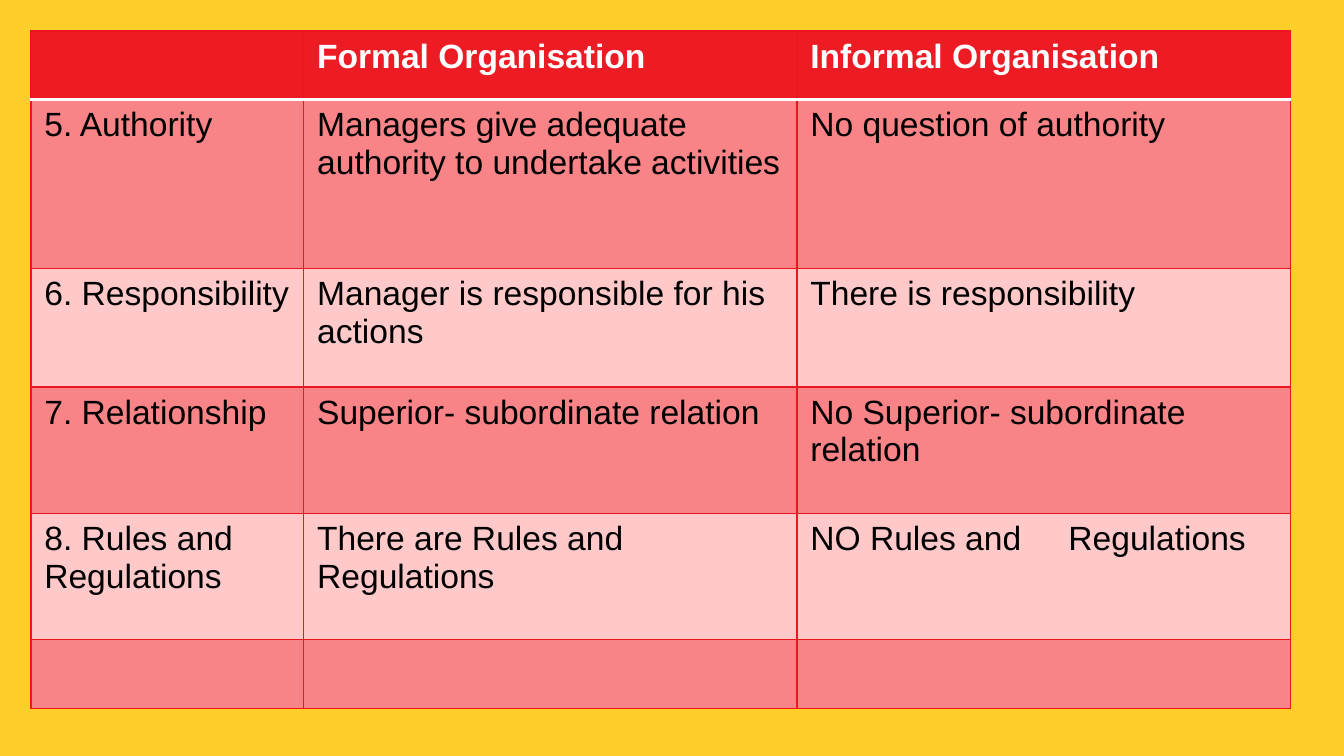
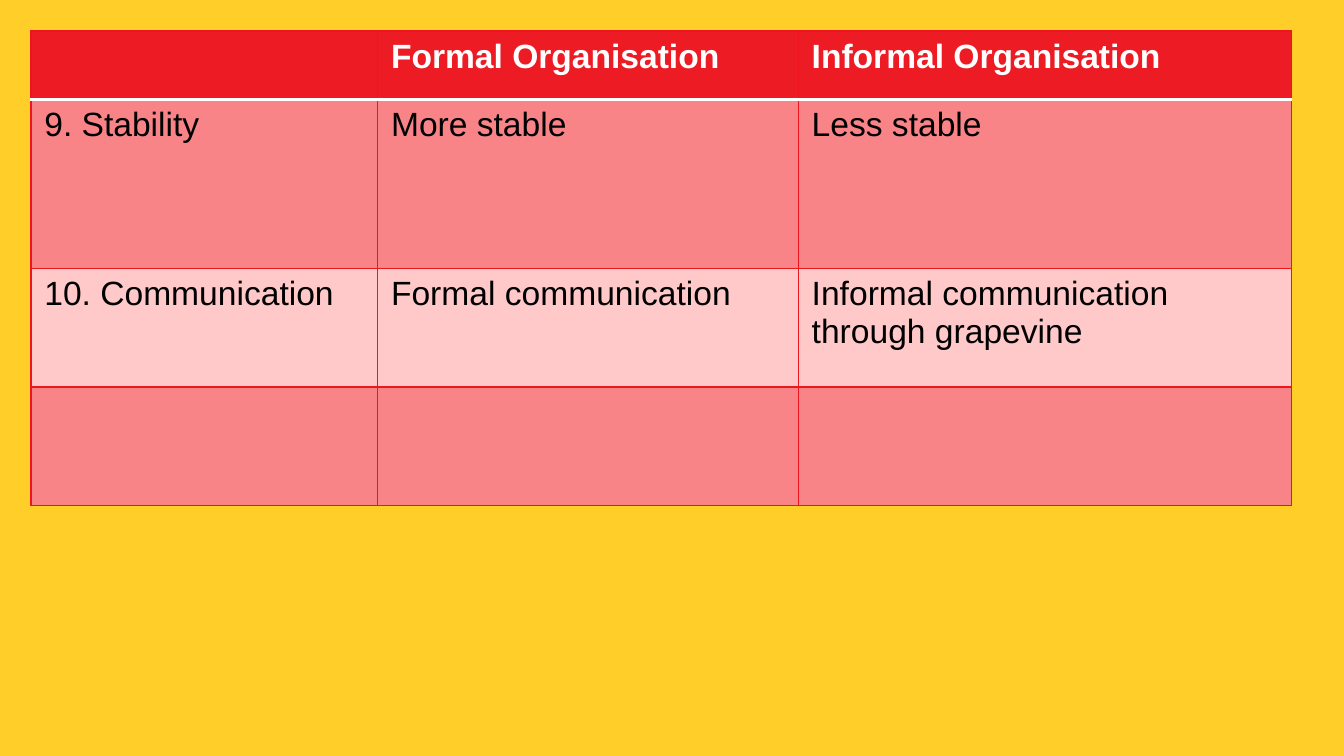
from dataclasses import dataclass

from lxml.etree import SubElement
from pptx import Presentation
from pptx.dml.color import RGBColor
from pptx.oxml.ns import qn
from pptx.util import Inches, Pt


@dataclass(frozen=True)
class Theme:
    background: str = "FFCE29"
    header: str = "ED1C24"
    dark_band: str = "F98488"
    light_band: str = "FFC9CA"
    grid: str = "ED161E"
    header_text: str = "FFFFFF"
    body_text: str = "000000"
    font: str = "Arial"
    size: float = 18
    grid_width: float = 0.75
    header_rule: float = 2


theme = Theme()


def write(cell, text, *, color, bold=False, tab=None):
    """Put one formatted paragraph in a cell, with an optional tab stop in inches."""
    paragraph = cell.text_frame.paragraphs[0]
    paragraph.font.size = Pt(theme.size)
    if not text:
        return
    run = paragraph.add_run()
    run.text = text
    run.font.name = theme.font
    run.font.size = Pt(theme.size)
    run.font.bold = bold
    run.font.color.rgb = RGBColor.from_string(color)
    if tab:
        properties = paragraph._p.get_or_add_pPr()
        stops = SubElement(properties, qn("a:tabLst"))
        SubElement(stops, qn("a:tab"), pos=str(Inches(tab)), algn="l")
        # Tab stops come before the default run properties
        properties.insert(0, stops)


def draw_border(cell, side, color, width):
    """Draw one edge of a cell: L, R, T or B."""
    line = SubElement(cell._tc.get_or_add_tcPr(), qn(f"a:ln{side}"), w=str(Pt(width)))
    fill = SubElement(line, qn("a:solidFill"))
    SubElement(fill, qn("a:srgbClr"), val=color)


# Content: column widths, row heights and wording of each comparison
headings = ("", "Formal Organisation", "Informal Organisation")
blank_row = ("", "", "")
comparisons = [
    (
        (2.03, 3.67, 3.67),
        (0.51, 1.26, 0.88, 0.94, 0.94, 0.51),
        [
            headings,
            ("5. Authority",
             "Managers give adequate authority to undertake activities",
             "No question of authority"),
            ("6. Responsibility",
             "Manager is responsible for his actions",
             "There is responsibility"),
            ("7. Relationship",
             "Superior- subordinate relation",
             "No Superior- subordinate relation"),
            ("8. Rules and Regulations",
             "There are Rules and Regulations",
             "NO Rules and\tRegulations"),
            blank_row,
        ],
    ),
    (
        (2.58, 3.13, 3.67),
        (0.51, 1.26, 0.88, 0.88),
        [
            headings,
            ("9. Stability", "More stable", "Less stable"),
            ("10. Communication",
             "Formal communication",
             "Informal communication through grapevine"),
            blank_row,
        ],
    ),
]

# Shared slide setup, in 16:9
prs = Presentation()
prs.slide_width = Inches(10)
prs.slide_height = Inches(10) * 9 // 16
backdrop = prs.slide_master.background.fill
backdrop.solid()
backdrop.fore_color.rgb = RGBColor.from_string(theme.background)
blank_layout = prs.slide_layouts[6]

# One slide for each comparison
for widths, heights, rows in comparisons:
    slide = prs.slides.add_slide(blank_layout)
    comparison = slide.shapes.add_table(
        len(rows), len(headings), Inches(0.23), Inches(0.23),
        Inches(sum(widths)), Inches(sum(heights)),
    ).table
    for column, width in zip(comparison.columns, widths):
        column.width = Inches(width)
    for row, height in zip(comparison.rows, heights):
        row.height = Inches(height)

    for r, row in enumerate(rows):
        is_header = r == 0
        if is_header:
            band = theme.header
        else:
            band = theme.dark_band if r % 2 else theme.light_band
        for c, text in enumerate(row):
            cell = comparison.cell(r, c)
            write(cell, text, bold=is_header,
                  color=theme.header_text if is_header else theme.body_text,
                  tab=1.92 if "\t" in text else None)

            # Red grid, with a white rule between header and body
            for side in "LRTB":
                if (r, side) in ((0, "B"), (1, "T")):
                    draw_border(cell, side, theme.header_text, theme.header_rule)
                else:
                    draw_border(cell, side, theme.grid, theme.grid_width)
            cell.fill.solid()
            cell.fill.fore_color.rgb = RGBColor.from_string(band)

prs.save("out.pptx")
